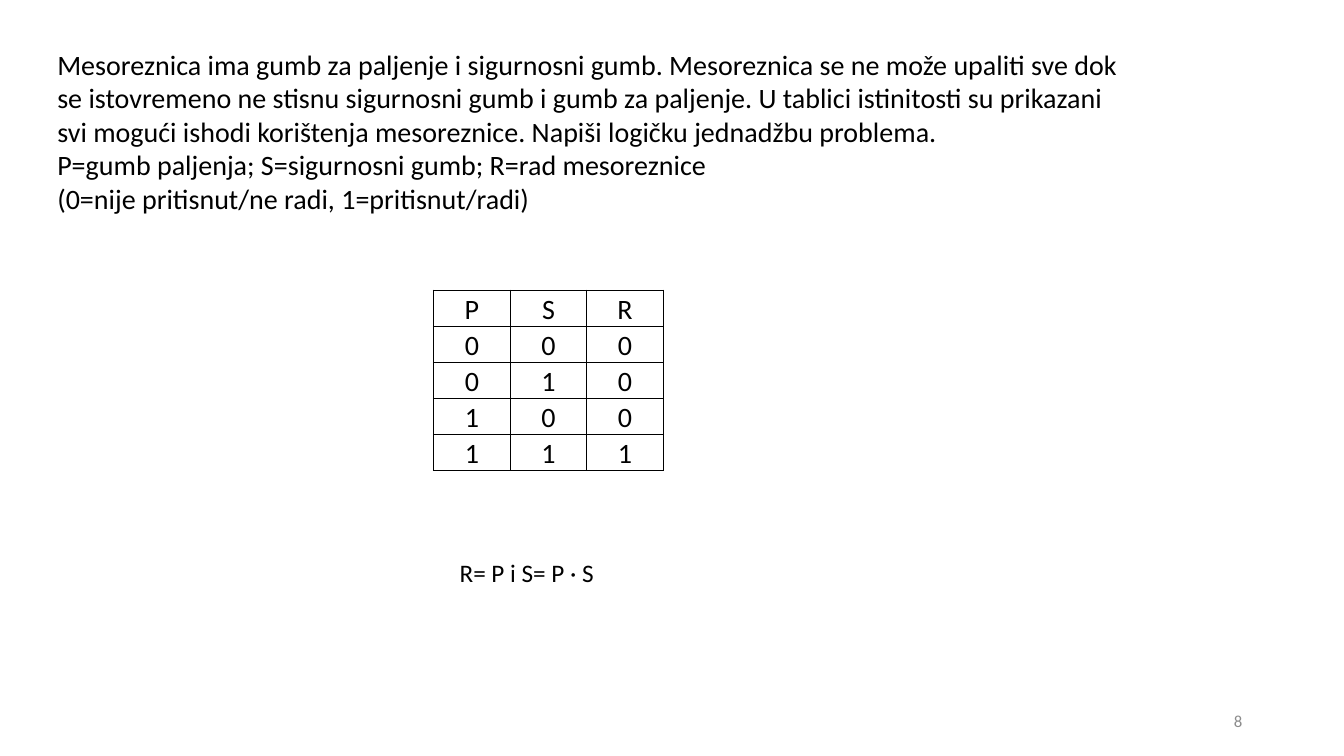
"""Build the truth table slide for the meat grinder logic problem."""
from lxml import etree
from pptx import Presentation
from pptx import util as u
from pptx.dml.color import RGBColor
from pptx.enum import text as t
from pptx.oxml import ns


def color(value):
    return RGBColor.from_string(value)


def write(frame, lines, size, ink="000000", align=t.PP_ALIGN.LEFT, spacing=None):
    frame.text = "\n".join(lines)
    for line in frame.paragraphs:
        line.alignment = align
        line.line_spacing = spacing
        for run in line.runs:
            for name, value in {"name": "Calibri", "size": u.Pt(size)}.items():
                setattr(run.font, name, value)
            run.font.color.rgb = color(ink)


deck = Presentation()
deck.slide_width, deck.slide_height = u.Inches(13.33), u.Inches(7.5)
slide = deck.slides.add_slide(deck.slide_layouts[6])

problem = [
    "Mesoreznica ima gumb za paljenje i sigurnosni gumb. Mesoreznica se ne može "
    "upaliti sve dok se istovremeno ne stisnu sigurnosni gumb i gumb za paljenje. "
    "U tablici istinitosti su prikazani svi mogući ishodi korištenja mesoreznice. "
    "Napiši logičku jednadžbu problema.",
    "P=gumb paljenja; S=sigurnosni gumb; R=rad mesoreznice",
    "(0=nije pritisnut/ne radi, 1=pritisnut/radi)",
]
equation = ["R= P i S= P · S"]
middle, top = t.MSO_ANCHOR.MIDDLE, t.MSO_ANCHOR.TOP
grow, fixed = t.MSO_AUTO_SIZE.SHAPE_TO_FIT_TEXT, t.MSO_AUTO_SIZE.NONE
left, right = t.PP_ALIGN.LEFT, t.PP_ALIGN.RIGHT

for place, lines, size, ink, align, anchor, fit in [
    ((9.42, 6.95, 3, 0.4), ["8"], 12, "8C8C8C", right, middle, fixed),
    ((0.47, 0.41, 10.84, 1.78), problem, 20, "000000", left, middle, grow),
    ((4.46, 5.48, 2.52, 0.4), equation, 18, "000000", left, top, grow),
]:
    frame = slide.shapes.add_textbox(*map(u.Inches, place)).text_frame
    settings = {"word_wrap": True, "vertical_anchor": anchor, "auto_size": fit}
    for name, value in settings.items():
        setattr(frame, name, value)
    write(frame, lines, size, ink, align)

outcomes = ["PSR", "000", "010", "100", "111"]
truth_place = map(u.Inches, (4.3, 2.88, 2.28, 1.75))
truth = slide.shapes.add_table(len(outcomes), 3, *truth_place).table
truth.first_row = truth.horz_banding = False
for column in truth.columns:
    column.width = u.Inches(0.76)
margins = {"margin_left": 0.07, "margin_right": 0.07, "margin_top": 0, "margin_bottom": 0}
for row, outcome in zip(truth.rows, outcomes):
    row.height = u.Inches(0.35)
    for cell, value in zip(row.cells, outcome):
        for name, inset in margins.items():
            setattr(cell, name, u.Inches(inset))
        write(cell.text_frame, [value], 20, align=t.PP_ALIGN.CENTER, spacing=1.07)
        properties = cell._tc.get_or_add_tcPr()
        for side in ("lnL", "lnR", "lnT", "lnB"):
            border = etree.SubElement(properties, ns.qn(f"a:{side}"), w=str(u.Pt(1)))
            ink = etree.SubElement(border, ns.qn("a:solidFill"))
            etree.SubElement(ink, ns.qn("a:srgbClr"), val="000000")
        cell.fill.background()

deck.save("out.pptx")
